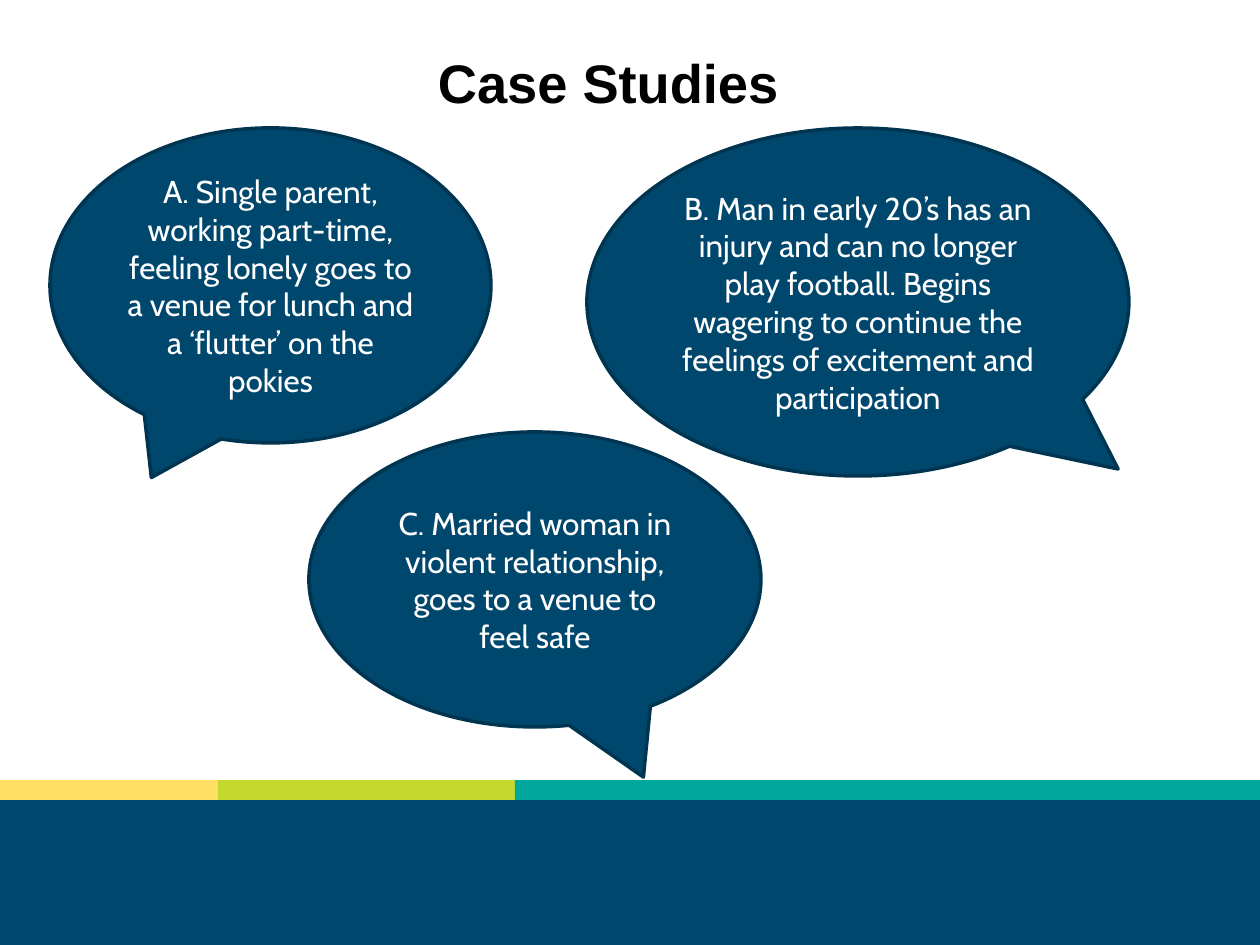
from pptx import Presentation
from pptx.dml.color import RGBColor
from pptx.enum.shapes import MSO_SHAPE
from pptx.enum.text import MSO_ANCHOR, PP_ALIGN
from pptx.util import Pt

PX = 914400 // 126
WIDTH, HEIGHT = 1260, 945
NAVY = RGBColor(0x00, 0x47, 0x6D)
DARK_NAVY = RGBColor(0x00, 0x35, 0x51)
YELLOW = RGBColor(0xFF, 0xDF, 0x63)
LIME = RGBColor(0xC4, 0xD8, 0x2E)
TEAL = RGBColor(0x00, 0xA7, 0x9D)
WHITE = RGBColor(0xFF, 0xFF, 0xFF)
BLACK = RGBColor(0x00, 0x00, 0x00)

TITLE = "Case Studies"
TITLE_PLACE = (87, 44, 1042, 74)
FOOTER_TOP = 798
STRIPE_TOP, STRIPE_HEIGHT = 780, 20
STRIPES = [(218, YELLOW), (297, LIME), (745, TEAL)]
CASES = [
    ("A. Single parent, working part-time, feeling lonely goes to a venue for lunch "
     "and a ‘flutter’ on the pokies", (50, 128, 441, 315), (-0.27, 0.61)),
    ("B. Man in early 20’s has an injury and can no longer play football. Begins "
     "wagering to continue the feelings of excitement and participation",
     (587, 128, 542, 348), (0.48, 0.48)),
    ("C. Married woman in violent relationship, goes to a venue to feel safe",
     (309, 432, 452, 295), (0.24, 0.67)),
]


def scaled(place):
    """Turn px lengths into EMU."""
    return [length * PX for length in place]


def add_filled(page, kind, place, color):
    """Add a flat shape without outline."""
    shape = page.shapes.add_shape(kind, *scaled(place))
    shape.shadow.inherit = False
    shape.fill.solid()
    shape.fill.fore_color.rgb = color
    shape.line.fill.background()
    return shape


def write(frame, text, font, size, color, bold=False):
    """Write one centred, wrapped paragraph."""
    frame.word_wrap = True
    para = frame.paragraphs[0]
    para.alignment = PP_ALIGN.CENTER
    span = para.add_run()
    span.text = text
    span.font.name = font
    span.font.size = Pt(size)
    span.font.color.rgb = color
    span.font.bold = bold


def add_callout(page, text, place, tail):
    """Add a speech bubble holding one case."""
    bubble = add_filled(page, MSO_SHAPE.OVAL_CALLOUT, place, NAVY)
    bubble.adjustments[0], bubble.adjustments[1] = tail
    bubble.line.color.rgb = DARK_NAVY
    bubble.line.width = Pt(2)
    bubble.text_frame.vertical_anchor = MSO_ANCHOR.MIDDLE
    write(bubble.text_frame, text, "Cabin", 18, WHITE)


def main():
    """Build and save the slide."""
    deck = Presentation()
    deck.slide_width, deck.slide_height = scaled((WIDTH, HEIGHT))
    page = deck.slides.add_slide(deck.slide_layouts[6])

    footer = (0, FOOTER_TOP, WIDTH, HEIGHT - FOOTER_TOP)
    add_filled(page, MSO_SHAPE.RECTANGLE, footer, NAVY)
    left = 0
    for width, color in STRIPES:
        stripe = (left, STRIPE_TOP, width, STRIPE_HEIGHT)
        add_filled(page, MSO_SHAPE.RECTANGLE, stripe, color)
        left += width

    frame = page.shapes.add_textbox(*scaled(TITLE_PLACE)).text_frame
    frame.margin_left, frame.margin_top, frame.margin_right, frame.margin_bottom = scaled((9, 5, 9, 5))
    write(frame, TITLE, "Arial", 31, BLACK, bold=True)

    for text, place, tail in CASES:
        add_callout(page, text, place, tail)
    deck.save("out.pptx")


if __name__ == "__main__":
    main()
